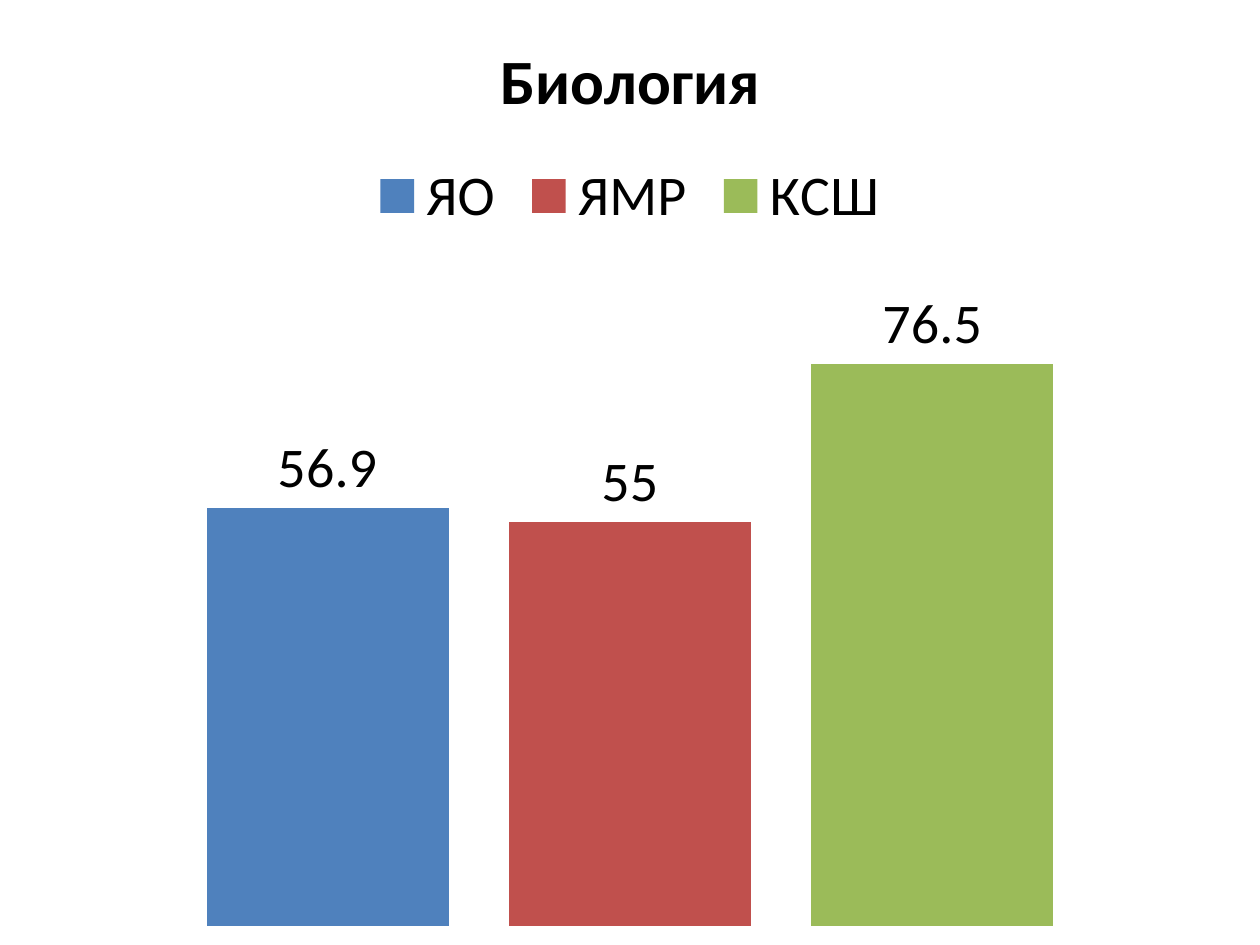
from lxml import etree
from pptx import Presentation
from pptx import util as u
from pptx.chart.data import CategoryChartData
from pptx.dml.color import RGBColor
from pptx.enum import chart as ch
from pptx.oxml import ns


def style(font, size, color="000000", bold=False):
    font.name = "Calibri"
    font.size = u.Pt(size)
    font.bold = bold
    font.color.rgb = RGBColor.from_string(color)


prs = Presentation()
prs.slide_width, prs.slide_height = u.Cm(25.4), u.Cm(19.05)
s = prs.slides.add_slide(prs.slide_layouts[6])

# Scores: name, value, colour
scores = [("ЯО", 56.9, "4F81BD"), ("ЯМР", 55, "C0504D"), ("КСШ", 76.5, "9BBB59")]
data = CategoryChartData()
data.categories = ["1"]
for name, value, _ in scores:
    data.add_series(name, [value])

# Full-slide column chart
chart = s.shapes.add_chart(
    ch.XL_CHART_TYPE.COLUMN_CLUSTERED, 0, 0, prs.slide_width, prs.slide_height, data
).chart
style(chart.font, 10)

# Title
p = chart.chart_title.text_frame.paragraphs[0]
r = p.add_run()
r.text = "Биология"
style(r.font, 36, bold=True)
chart.chart_title.include_in_layout = False

# Legend
chart.has_legend = True
chart.legend.position = ch.XL_LEGEND_POSITION.TOP
chart.legend.include_in_layout = False
style(chart.legend.font, 32)

# Hidden axes
chart.category_axis.visible = False
axis = chart.value_axis
axis.visible = False
axis.has_major_gridlines = False
axis.minimum_scale, axis.maximum_scale = 0, 90

# Columns and value labels
plot = chart.plots[0]
plot.gap_width, plot.overlap = 150, -25
plot.vary_by_categories = False
for series, (_, _, color) in zip(plot.series, scores):
    series.format.fill.solid()
    series.format.fill.fore_color.rgb = RGBColor.from_string(color)
    labels = series.data_labels
    labels.show_value = True
    labels.position = ch.XL_LABEL_POSITION.OUTSIDE_END
    style(labels.font, 32)

# Plot area position, as fractions of the chart
area = chart.element.find(".//" + ns.qn("c:plotArea"))
for old in area.findall(ns.qn("c:layout")):
    area.remove(old)
layout = etree.Element(ns.qn("c:layout"))
area.insert(0, layout)
manual = etree.SubElement(layout, ns.qn("c:manualLayout"))
for tag, val in [("layoutTarget", "inner"), ("xMode", "edge"), ("yMode", "edge"),
                 ("x", "0.02"), ("y", "0.28"), ("w", "0.96"), ("h", "0.7")]:
    etree.SubElement(manual, ns.qn("c:" + tag)).set("val", val)

prs.save("out.pptx")
